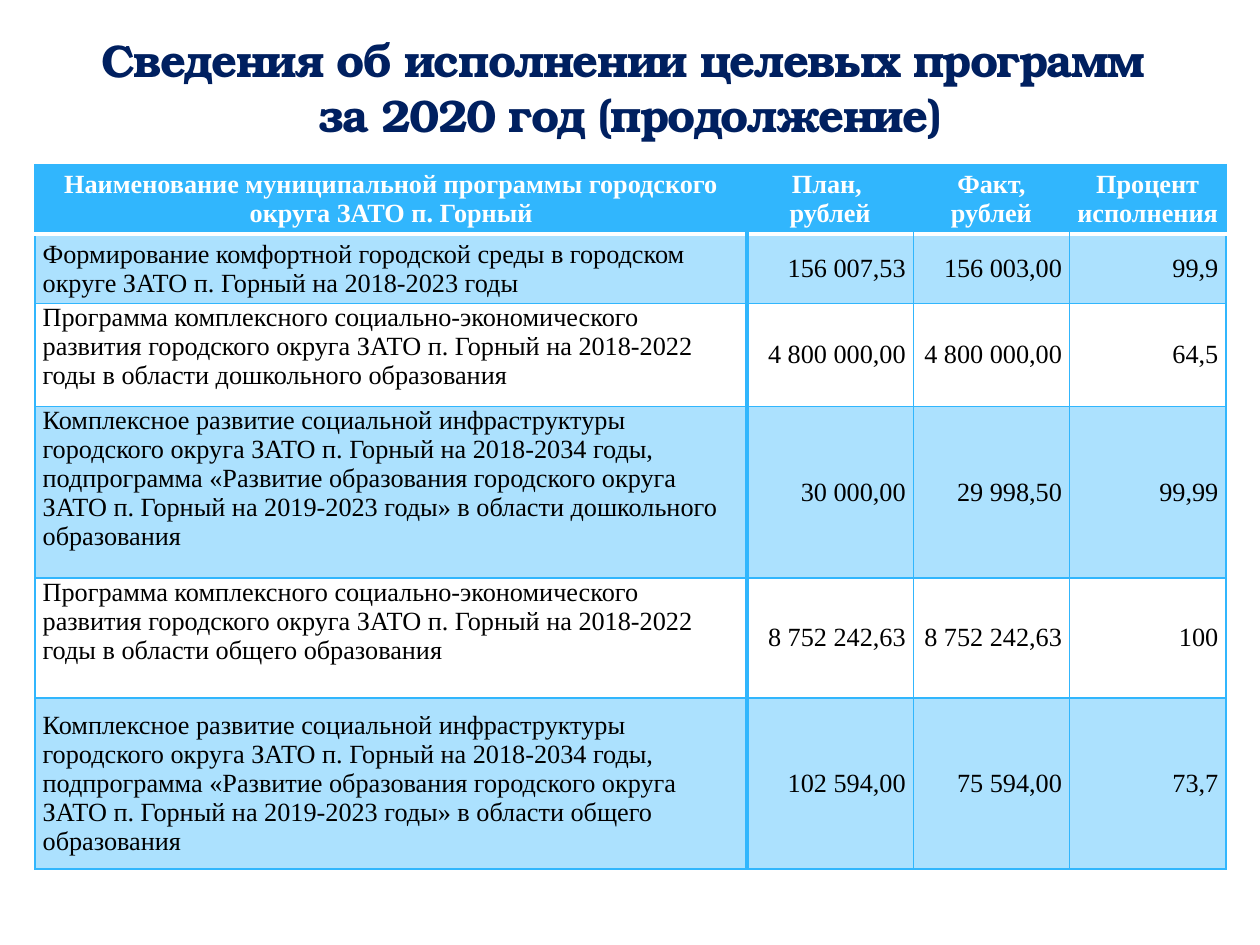
from lxml import etree
from pptx import Presentation
from pptx import util as u
from pptx.dml.color import RGBColor
from pptx.enum import text
from pptx.oxml.ns import qn

BLUE, WHITE, BLACK, NAVY = "31B6FD", "FFFFFF", "000000", "002060"
TITLE_FONT, BODY_FONT = "TeX Gyre Bonum", "Times New Roman"
LEFT, CENTER, RIGHT = text.PP_ALIGN.LEFT, text.PP_ALIGN.CENTER, text.PP_ALIGN.RIGHT
TOP, MIDDLE = text.MSO_ANCHOR.TOP, text.MSO_ANCHOR.MIDDLE

# Content
TITLE = ["Сведения об исполнении целевых программ ", "за 2020 год (продолжение)"]
HEADER = [
    ["Наименование муниципальной программы городского округа ЗАТО п. Горный"],
    ["План, ", "рублей"],
    ["Факт,", "рублей"],
    ["Процент исполнения"],
]
ECONOMY = ("Программа комплексного социально-экономического развития городского "
           "округа ЗАТО п. Горный на 2018-2022 годы в области {} образования")
SOCIAL = ("Комплексное развитие социальной инфраструктуры городского округа ЗАТО "
          "п. Горный на 2018-2034 годы, подпрограмма «Развитие образования городского "
          "округа ЗАТО п. Горный на 2019-2023 годы» в области {} образования")
PROGRAMS = [  # name, plan, actual, percent, anchor of the name
    ("Формирование комфортной городской среды в городском округе ЗАТО п. Горный "
     "на 2018-2023 годы", "156 007,53", "156 003,00", "99,9", MIDDLE),
    (ECONOMY.format("дошкольного"), "4 800 000,00", "4 800 000,00", "64,5", TOP),
    (SOCIAL.format("дошкольного"), "30 000,00", "29 998,50", "99,99", TOP),
    (ECONOMY.format("общего"), "8 752 242,63", "8 752 242,63", "100", TOP),
    (SOCIAL.format("общего"), "102 594,00", "75 594,00", "73,7", MIDDLE),
]

# Layout in centimetres
X, WIDTH = 0.71, 24.0
TITLE_Y, TITLE_H, TABLE_Y = 0.53, 2.79, 3.32
COL_W = [14.35, 3.35, 3.15, 3.15]
ROW_H = [1.4, 1.4, 2.08, 3.45, 2.42, 3.45]


def rgb(color):
    return RGBColor.from_string(color)


def add_alpha(fill_parent, percent):
    clr = fill_parent.find(".//" + qn("a:srgbClr"))
    etree.SubElement(clr, qn("a:alpha"), val=str(percent * 1000))


def make_line(tag, color, width):
    ln = etree.Element(qn(tag), w=str(u.Pt(width)))
    if width:
        fill = etree.SubElement(ln, qn("a:solidFill"))
        etree.SubElement(fill, qn("a:srgbClr"), val=color)
    else:
        etree.SubElement(ln, qn("a:noFill"))
    return ln


def write(tf, lines, font, size, color, bold, align):
    runs = []
    for i, line in enumerate(lines):
        p = tf.paragraphs[0] if i == 0 else tf.add_paragraph()
        p.alignment = align
        r = p.add_run()
        r.text = line
        r.font.name, r.font.size, r.font.bold = font, u.Pt(size), bold
        r.font.color.rgb = rgb(color)
        runs.append(r)
    return runs


def cell_borders(row, col):
    """Colour and width of the left, right, top and bottom edges."""
    thin, thick, none = (BLUE, 1), (BLUE, 3), (BLUE, 0)
    rule = (WHITE, 3)
    if row == 0:
        return (thin if col == 0 else none, thin if col == 3 else none, thin,
                rule)
    return (thick if col == 1 else thin, thick if col == 0 else thin,
            rule if row == 1 and col else thin, thin)


def style_cell(cell, row, col, anchor):
    cell.vertical_anchor = anchor
    cell.margin_left = cell.margin_right = u.Cm(0.15)
    cell.margin_top = cell.margin_bottom = 0
    tc_pr = cell._tc.get_or_add_tcPr()
    if row == 0 or row % 2:
        cell.fill.solid()
        cell.fill.fore_color.rgb = rgb(BLUE)
        if row:
            add_alpha(tc_pr, 40)
    else:
        cell.fill.background()
    tags = ("a:lnL", "a:lnR", "a:lnT", "a:lnB")
    for i, (tag, edge) in enumerate(zip(tags, cell_borders(row, col))):
        tc_pr.insert(i, make_line(tag, *edge))


prs = Presentation()
prs.slide_width, prs.slide_height = u.Cm(25.4), u.Cm(19.05)
s = prs.slides.add_slide(prs.slide_layouts[6])

# Title with tight letters and a faint outline
sp = s.shapes.add_textbox(u.Cm(X), u.Cm(TITLE_Y), u.Cm(WIDTH), u.Cm(TITLE_H))
tf = sp.text_frame
tf.word_wrap = True
for r in write(tf, TITLE, TITLE_FONT, 26, NAVY, True, CENTER):
    r_pr = r.font._element
    r_pr.set("spc", "-100")
    outline = make_line("a:ln", "AFCCDE", 0.25)
    add_alpha(outline, 25)
    r_pr.insert(0, outline)

# Table of programmes
table = s.shapes.add_table(len(ROW_H), len(COL_W), u.Cm(X), u.Cm(TABLE_Y),
                           u.Cm(WIDTH), u.Cm(sum(ROW_H))).table
for column, width in zip(table.columns, COL_W):
    column.width = u.Cm(width)
for row, height in zip(table.rows, ROW_H):
    row.height = u.Cm(height)

for col, lines in enumerate(HEADER):
    cell = table.cell(0, col)
    style_cell(cell, 0, col, MIDDLE)
    write(cell.text_frame, lines, BODY_FONT, 15, WHITE, True, CENTER)

for row, (*values, name_anchor) in enumerate(PROGRAMS, start=1):
    for col, value in enumerate(values):
        cell = table.cell(row, col)
        style_cell(cell, row, col, MIDDLE if col else name_anchor)
        write(cell.text_frame, [value], BODY_FONT, 15, BLACK, False,
              RIGHT if col else LEFT)

prs.save("out.pptx")
